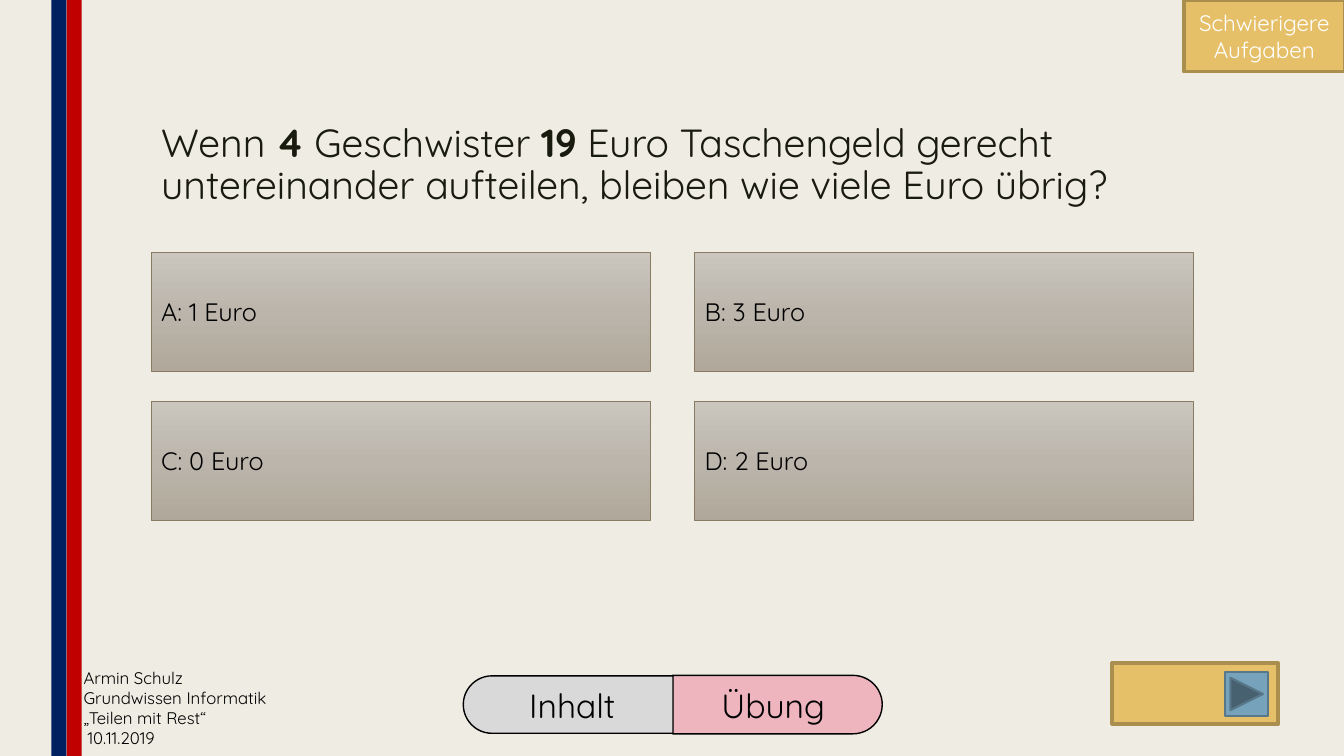
from copy import deepcopy

from pptx import Presentation
from pptx.dml.color import RGBColor
from pptx.enum.shapes import MSO_SHAPE
from pptx.enum.text import MSO_ANCHOR, PP_ALIGN
from pptx.oxml.ns import qn
from pptx.util import Inches, Pt

FONT = "Quicksand"
BACKGROUND = RGBColor(0xEF, 0xED, 0xE3)
RED = RGBColor(0xC0, 0x00, 0x00)
NAVY = RGBColor(0x00, 0x20, 0x60)
BLACK = RGBColor(0x00, 0x00, 0x00)
WHITE = RGBColor(0xFF, 0xFF, 0xFF)
TITLE_INK = RGBColor(0x19, 0x1B, 0x0E)
PINK = RGBColor(0xEE, 0xB5, 0xBF)
GREY = RGBColor(0xD9, 0xD9, 0xD9)
GOLD = RGBColor(0xE6, 0xC0, 0x69)
GOLD_EDGE = RGBColor(0xAA, 0x8E, 0x4E)
BLUE = RGBColor(0x77, 0xA2, 0xBB)
BLUE_EDGE = RGBColor(0x58, 0x78, 0x8A)
ANSWER_EDGE = RGBColor(0x89, 0x7B, 0x61)
ANSWER_STOPS = [
    (0, RGBColor(0xCB, 0xC7, 0xBF)),
    (0.5, RGBColor(0xBB, 0xB5, 0xAB)),
    (1, RGBColor(0xB0, 0xA8, 0x9A)),
]

# Runs are (text, bold)
QUESTION = [
    ("Wenn ", False),
    ("4", True),
    (" Geschwister ", False),
    ("19", True),
    (" Euro Taschengeld gerecht untereinander aufteilen, "
     "bleiben wie viele Euro übrig?", False),
]
ANSWERS = ["A: 1 Euro", "B: 3 Euro", "C: 0 Euro", "D: 2 Euro"]
FOOTER = ["Armin Schulz", "Grundwissen Informatik", "„Teilen mit Rest“"]
DATE = "10.11.2019"
BADGE = ["Schwierigere", "Aufgaben"]
STRIPES = [(0.66, RED), (0.51, NAVY)]
# Label, box, rotation, text direction, fill
NAVIGATION = [
    ("Übung", (7.42, 5.95, 0.58, 2.08), 90, "vert270", PINK),
    ("Inhalt", (5.35, 5.95, 0.57, 2.08), 270, "vert", GREY),
]

ANSWER_LEFT, ANSWER_TOP = 1.5, 2.5
ANSWER_WIDTH, ANSWER_HEIGHT = 4.95, 1.18
COLUMN_STEP, ROW_STEP = 5.39, 1.48


def write(shape, lines, size, color, align=PP_ALIGN.LEFT,
          anchor=MSO_ANCHOR.MIDDLE, line_spacing=None):
    """Fill a shape with lines, each a list of (text, bold) runs."""
    frame = shape.text_frame
    frame.word_wrap = True
    frame.vertical_anchor = anchor
    for index, runs in enumerate(lines):
        paragraph = frame.add_paragraph() if index else frame.paragraphs[0]
        paragraph.alignment = align
        paragraph.line_spacing = line_spacing
        for text, bold in runs:
            run = paragraph.add_run()
            run.text = text
            run.font.color.rgb = color
            font_format = {"name": FONT, "size": Pt(size), "bold": bold}
            for name, value in font_format.items():
                setattr(run.font, name, value)


def plain(lines):
    return [[(line, False)] for line in lines]


def add_box(slide, kind, box, fill=None, edge=None, edge_width=0):
    shape = slide.shapes.add_shape(kind, *map(Inches, box))
    shape.shadow.inherit = False
    if fill is not None:
        shape.fill.solid()
        shape.fill.fore_color.rgb = fill
    if edge is None:
        shape.line.fill.background()
    else:
        shape.line.color.rgb = edge
        shape.line.width = Pt(edge_width)
    return shape


def add_text(slide, box, lines, size, color, line_spacing=None):
    text_box = slide.shapes.add_textbox(*map(Inches, box))
    write(text_box, lines, size, color, anchor=MSO_ANCHOR.TOP,
          line_spacing=line_spacing)


def shade(shape):
    """Give a shape the three-stop vertical answer gradient."""
    shape.fill.gradient()
    shape.fill.gradient_angle = 270
    stop_list = shape._element.spPr.find(".//" + qn("a:gsLst"))
    stop_list.insert(1, deepcopy(stop_list[0]))
    for stop, (position, color) in zip(shape.fill.gradient_stops, ANSWER_STOPS):
        stop.position = position
        stop.color.rgb = color


def main():
    presentation = Presentation()
    presentation.slide_width = Inches(13.33)
    presentation.slide_height = Inches(7.5)
    slide = presentation.slides.add_slide(presentation.slide_layouts[6])
    slide.background.fill.solid()
    slide.background.fill.fore_color.rgb = BACKGROUND

    for left, color in STRIPES:
        add_box(slide, MSO_SHAPE.RECTANGLE, (left, 0, 0.15, 7.5), color)

    add_text(slide, (0.77, 7.17, 2.18, 0.22), plain([DATE]), 12, BLACK)
    add_text(slide, (0.73, 6.57, 2.18, 0.71), plain(FOOTER), 12, BLACK)

    for label, box, rotation, direction, color in NAVIGATION:
        button = add_box(slide, MSO_SHAPE.ROUND_2_SAME_RECTANGLE, box,
                         color, BLACK, 1)
        button.adjustments[0] = 0.5
        button.adjustments[1] = 0
        button.rotation = rotation
        write(button, plain([label]), 24, BLACK, PP_ALIGN.CENTER)
        button.text_frame._txBody.bodyPr.set("vert", direction)

    add_box(slide, MSO_SHAPE.RECTANGLE, (11.03, 6.58, 1.65, 0.6),
            GOLD, GOLD_EDGE, 2.75)
    add_text(slide, (1.5, 1.18, 11.58, 1.06), [QUESTION], 28, TITLE_INK, 0.89)

    for index, answer in enumerate(ANSWERS):
        row, column = divmod(index, 2)
        box = (ANSWER_LEFT + column * COLUMN_STEP, ANSWER_TOP + row * ROW_STEP,
               ANSWER_WIDTH, ANSWER_HEIGHT)
        shape = add_box(slide, MSO_SHAPE.RECTANGLE, box,
                        edge=ANSWER_EDGE, edge_width=0.5)
        shade(shape)
        write(shape, plain([answer]), 18, BLACK)

    add_box(slide, MSO_SHAPE.ACTION_BUTTON_FORWARD_OR_NEXT,
            (12.15, 6.67, 0.43, 0.43), BLUE, BLUE_EDGE, 1.5)
    badge = add_box(slide, MSO_SHAPE.RECTANGLE, (11.74, 0, 1.6, 0.71),
                    GOLD, GOLD_EDGE, 2.75)
    write(badge, plain(BADGE), 16, WHITE, PP_ALIGN.CENTER)

    presentation.save("out.pptx")


if __name__ == "__main__":
    main()
